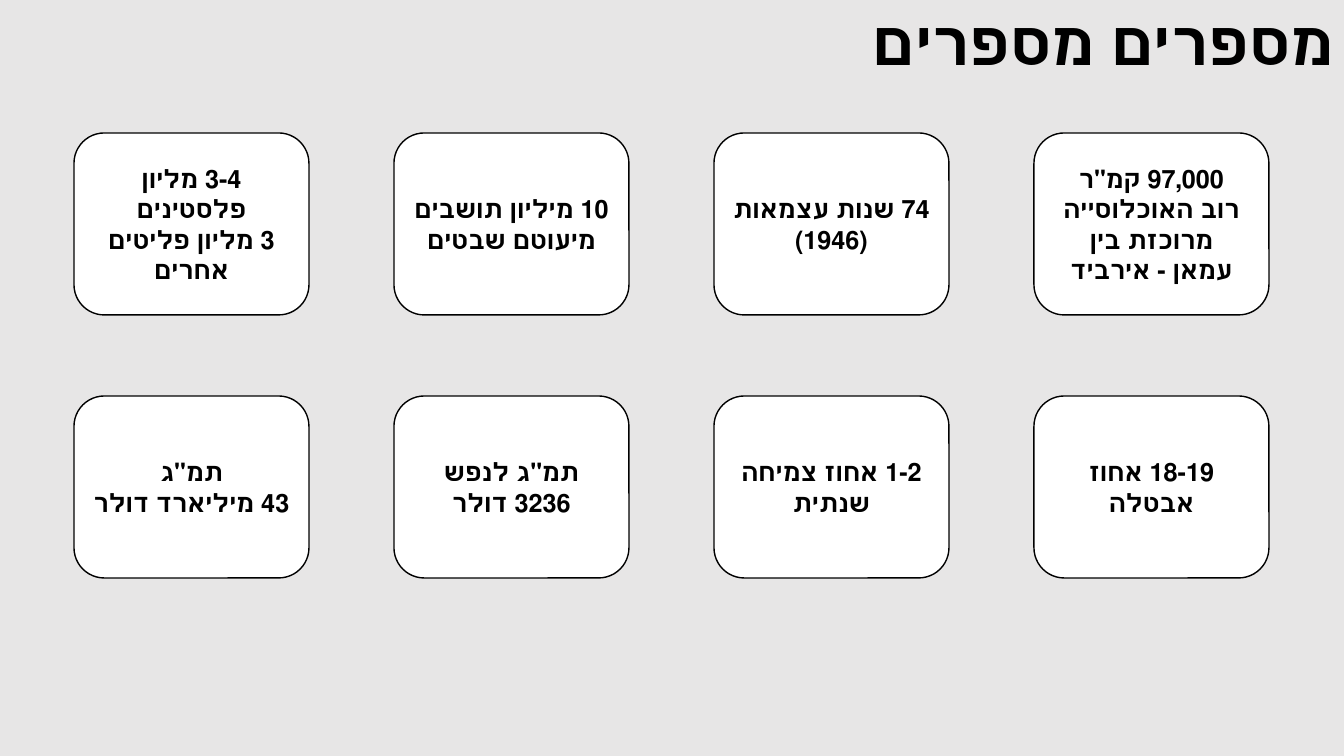
from pptx import Presentation
from pptx.dml.color import RGBColor
from pptx.enum.lang import MSO_LANGUAGE_ID
from pptx.enum.shapes import MSO_SHAPE
from pptx.enum.text import MSO_ANCHOR, PP_ALIGN
from pptx.util import Pt

ROUNDED = MSO_SHAPE.ROUNDED_RECTANGLE
MIDDLE = MSO_ANCHOR.MIDDLE
CENTER, RIGHT = PP_ALIGN.CENTER, PP_ALIGN.RIGHT
HEBREW = MSO_LANGUAGE_ID.HEBREW

THEME = {
    "background": RGBColor(0xE7, 0xE6, 0xE6),
    "card": RGBColor(0xFF, 0xFF, 0xFF),
    "ink": RGBColor(0, 0, 0),
    "font": "Calibri",
    "title_size": Pt(44),
    "card_size": Pt(18),
    "outline": Pt(1),
}


def px(*lengths):
    """Turn pixels (100.8 to the inch) into EMU."""
    return [round(length * 914400 / 100.8) for length in lengths]


def write(frame, lines, size, align, spacing=None):
    """Fill a text frame with bold right-to-left paragraphs."""
    frame.word_wrap = True
    frame.vertical_anchor = MIDDLE
    font_format = {"name": THEME["font"], "size": size, "bold": True,
                   "language_id": HEBREW}
    for number, line in enumerate(lines):
        paragraph = frame.add_paragraph() if number else frame.paragraphs[0]
        paragraph.alignment = align
        paragraph.line_spacing = spacing
        paragraph._p.get_or_add_pPr().set("rtl", "1")
        run = paragraph.add_run()
        run.text = line
        for attribute, value in font_format.items():
            setattr(run.font, attribute, value)
        run.font.color.rgb = THEME["ink"]


# Slide and background
prs = Presentation()
prs.slide_width, prs.slide_height = px(1344, 756)
slide = prs.slides.add_slide(prs.slide_layouts[6])
slide.background.fill.solid()
slide.background.fill.fore_color.rgb = THEME["background"]

# Title
title = slide.shapes.add_textbox(*px(185, -27, 1159, 145))
write(title.text_frame, ["מספרים מספרים"], THEME["title_size"], RIGHT, 0.9)

# Fact cards, each row read from right to left
FACT_ROWS = [
    [
        ['97,000 קמ"ר', "רוב האוכלוסייה מרוכזת בין", "עמאן - אירביד"],
        ["74 שנות עצמאות (1946)"],
        ["10 מיליון תושבים", "מיעוטם שבטים"],
        ["3-4 מליון פלסטינים", "3 מליון פליטים אחרים"],
    ],
    [
        ["18-19 אחוז אבטלה"],
        ["1-2 אחוז צמיחה שנתית"],
        ['תמ"ג לנפש', "3236 דולר"],
        ['תמ"ג', "43 מיליארד דולר"],
    ],
]
CARD_WIDTH, CARD_HEIGHT = 235, 182
FIRST_LEFT, FIRST_TOP = 1034, 133
COLUMN_STEP, ROW_STEP = 320, 263

for row, facts in enumerate(FACT_ROWS):
    for column, lines in enumerate(facts):
        left = FIRST_LEFT - column * COLUMN_STEP
        top = FIRST_TOP + row * ROW_STEP
        card = slide.shapes.add_shape(
            ROUNDED, *px(left, top, CARD_WIDTH, CARD_HEIGHT))
        card.shadow.inherit = False
        card.fill.solid()
        card.fill.fore_color.rgb = THEME["card"]
        card.line.color.rgb = THEME["ink"]
        card.line.width = THEME["outline"]
        write(card.text_frame, lines, THEME["card_size"], CENTER)

prs.save("out.pptx")
